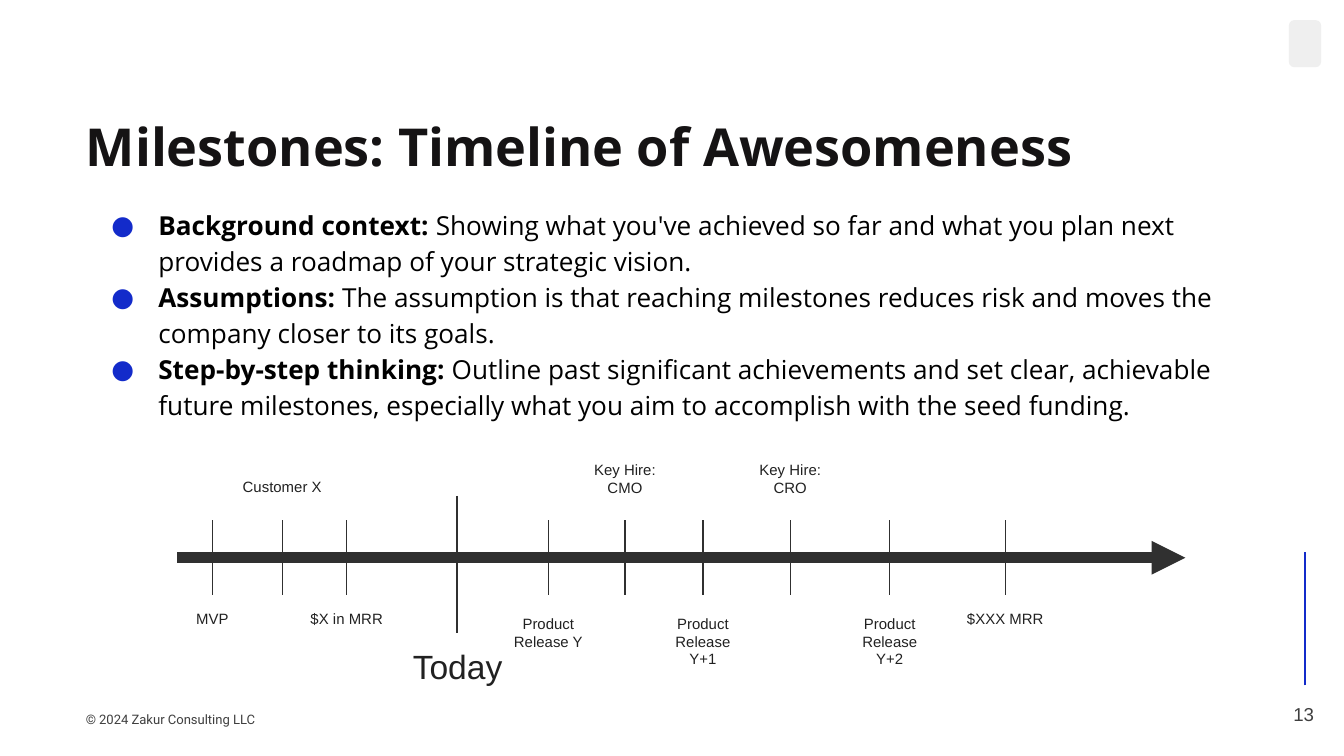
from dataclasses import dataclass

from lxml import etree
from pptx import Presentation
from pptx.dml.color import RGBColor
from pptx.enum.shapes import MSO_CONNECTOR, MSO_SHAPE
from pptx.enum.text import MSO_ANCHOR, MSO_AUTO_SIZE, PP_ALIGN
from pptx.oxml.ns import qn
from pptx.util import Inches, Pt

STRAIGHT = MSO_CONNECTOR.STRAIGHT
ROUNDED_RECTANGLE = MSO_SHAPE.ROUNDED_RECTANGLE
MIDDLE = MSO_ANCHOR.MIDDLE
FIT_SHAPE = MSO_AUTO_SIZE.SHAPE_TO_FIT_TEXT
LEFT, CENTER = PP_ALIGN.LEFT, PP_ALIGN.CENTER

BLACK = RGBColor(0x00, 0x00, 0x00)
TITLE_INK = RGBColor(0x15, 0x13, 0x14)
LABEL_INK = RGBColor(0x21, 0x21, 0x21)
FOOTER_INK = RGBColor(0x3F, 0x3F, 0x3F)
AXIS = RGBColor(0x30, 0x30, 0x30)
BLUE = RGBColor(0x13, 0x2B, 0xCA)
PALE_GRAY = RGBColor(0xEF, 0xEF, 0xEF)

AXIS_Y = 4.15
TICK_TOP, TICK_BOTTOM = 3.87, 4.43
LABEL_WIDTH = 0.79
BELOW = 4.47
ABOVE_ONE_LINE = 3.49
ABOVE_TWO_LINES = 3.33


@dataclass(frozen=True)
class Milestone:
    x: float
    label: str
    lines: int = 1
    top: float = BELOW


@dataclass(frozen=True)
class Point:
    heading: str
    detail: str


MILESTONES = [
    Milestone(1.58, "MVP"),
    Milestone(2.1, "Customer X", 1, ABOVE_ONE_LINE),
    Milestone(2.58, "$X in MRR"),
    Milestone(4.08, "Product Release Y", 2),
    Milestone(4.65, "Key Hire: CMO", 2, ABOVE_TWO_LINES),
    Milestone(5.23, "Product Release Y+1", 3),
    Milestone(5.88, "Key Hire: CRO", 2, ABOVE_TWO_LINES),
    Milestone(6.62, "Product Release Y+2", 3),
    Milestone(7.48, "$XXX MRR"),
]

POINTS = [
    Point("Background context: ",
          "Showing what you've achieved so far and what you plan next "
          "provides a roadmap of your strategic vision."),
    Point("Assumptions:",
          " The assumption is that reaching milestones reduces risk and moves "
          "the company closer to its goals."),
    Point("Step-by-step thinking:",
          " Outline past significant achievements and set clear, achievable "
          "future milestones, especially what you aim to accomplish with the "
          "seed funding."),
]


def add_box(slide, left: float, top: float, width: float, height: float):
    """Add a wrapping text box with equal insets and return its text frame."""
    frame = slide.shapes.add_textbox(
        Inches(left), Inches(top), Inches(width), Inches(height)).text_frame
    frame.word_wrap = True
    frame.margin_left = frame.margin_right = Inches(0.1)
    frame.margin_top = frame.margin_bottom = Inches(0.1)
    return frame


def style(paragraph, size: float, font: str, color: RGBColor, align=LEFT) -> None:
    paragraph.alignment = align
    paragraph.font.size = Pt(size)
    paragraph.font.name = font
    paragraph.font.color.rgb = color


def add_text(frame, text: str, size: float, font: str, color: RGBColor, align=LEFT):
    paragraph = frame.paragraphs[0]
    paragraph.text = text
    style(paragraph, size, font, color, align)
    return paragraph


def add_line(slide, x1: float, y1: float, x2: float, y2: float,
             color: RGBColor, width: float = 0.75):
    line = slide.shapes.add_connector(
        STRAIGHT, Inches(x1), Inches(y1), Inches(x2), Inches(y2))
    line.line.color.rgb = color
    line.line.width = Pt(width)
    etree.SubElement(line._element.spPr, qn("a:effectLst"))
    return line


def add_milestone(slide, milestone: Milestone) -> None:
    add_line(slide, milestone.x, TICK_TOP, milestone.x, TICK_BOTTOM, AXIS)
    frame = add_box(slide, milestone.x - LABEL_WIDTH / 2, milestone.top,
                    LABEL_WIDTH, 0.2 + 0.14 * milestone.lines)
    frame.auto_size = FIT_SHAPE
    add_text(frame, milestone.label, 8, "Arial", LABEL_INK, CENTER)


def add_timeline(slide) -> None:
    axis = add_line(slide, 1.32, AXIS_Y, 8.82, AXIS_Y, AXIS, 6)
    etree.SubElement(axis.line._get_or_add_ln(), qn("a:tailEnd"), type="triangle")
    for milestone in MILESTONES:
        add_milestone(slide, milestone)
    add_line(slide, 3.4, 3.69, 3.4, 4.71, AXIS)
    today = add_box(slide, 2.87, 4.71, 1.07, 0.5)
    today.auto_size = FIT_SHAPE
    add_text(today, "Today", 18, "Arial", LABEL_INK, CENTER)


def set_bullet(paragraph) -> None:
    """Give the paragraph a blue dot and a hanging indent."""
    properties = paragraph._p.get_or_add_pPr()
    properties.set("marL", str(Inches(0.5)))
    properties.set("indent", str(Inches(-0.35)))
    color = etree.SubElement(properties, qn("a:buClr"))
    etree.SubElement(color, qn("a:srgbClr"), val=str(BLUE))
    etree.SubElement(properties, qn("a:buSzPts"), val="1400")
    etree.SubElement(properties, qn("a:buFont"), typeface="Open Sans")
    etree.SubElement(properties, qn("a:buChar"), char="●")


def add_points(slide) -> None:
    frame = add_box(slide, 0.58, 1.42, 8.72, 2.06)
    for index, point in enumerate(POINTS):
        paragraph = frame.add_paragraph() if index else frame.paragraphs[0]
        set_bullet(paragraph)
        paragraph.line_spacing = 1.15
        style(paragraph, 14, "Open Sans", BLACK)
        heading = paragraph.add_run()
        heading.text = point.heading
        heading.font.bold = True
        paragraph.add_run().text = point.detail


def add_frame_parts(slide) -> None:
    """Add the corner badge, side rule, copyright line and page number."""
    badge = slide.shapes.add_shape(
        ROUNDED_RECTANGLE, Inches(9.59), Inches(0.15), Inches(0.24), Inches(0.35))
    badge.shadow.inherit = False
    badge.fill.solid()
    badge.fill.fore_color.rgb = PALE_GRAY
    badge.line.fill.background()

    add_line(slide, 9.71, 5.1, 9.71, 4.11, BLUE)

    footer = add_box(slide, 0.54, 5.21, 2.14, 0.32)
    add_text(footer, "© 2024 Zakur Consulting LLC", 7, "Roboto",
             FOOTER_INK).line_spacing = 1.15

    number = add_box(slide, 9.43, 5.1, 0.54, 0.43)
    number.vertical_anchor = MIDDLE
    add_text(number, "13", 10, "Arial", FOOTER_INK, CENTER)


def main() -> None:
    presentation = Presentation()
    presentation.slide_width = Inches(10)
    presentation.slide_height = Inches(10) * 9 // 16
    slide = presentation.slides.add_slide(presentation.slide_layouts[6])

    add_frame_parts(slide)
    title = add_box(slide, 0.54, 0.75, 8.72, 1.08)
    add_text(title, "Milestones: Timeline of Awesomeness", 28, "Open Sans",
             TITLE_INK).font.bold = True
    add_points(slide)
    add_timeline(slide)
    presentation.save("out.pptx")


if __name__ == "__main__":
    main()
